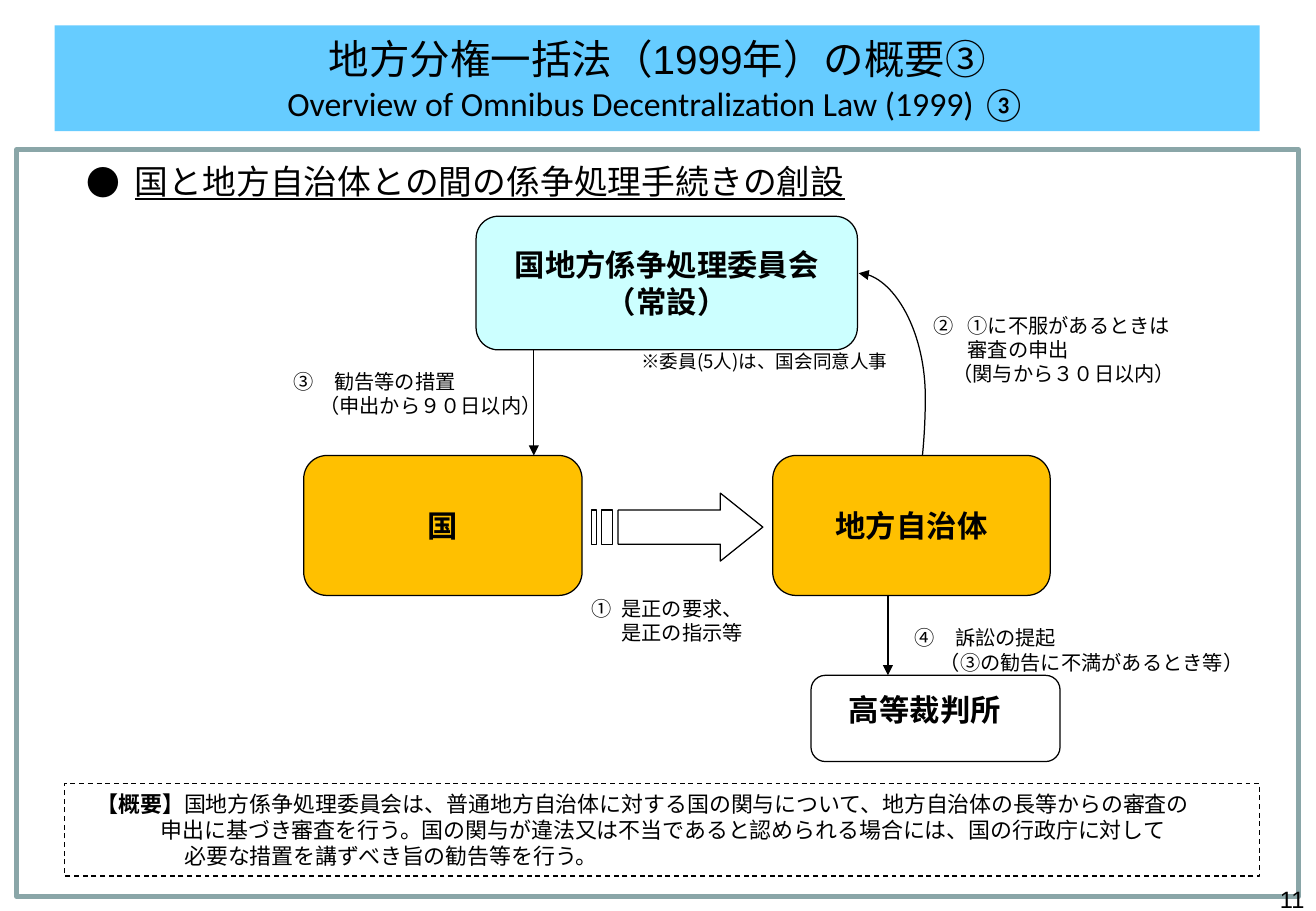
"""Build the slide on dispute settlement between state and local government."""
from dataclasses import dataclass

from lxml.etree import SubElement
from pptx import Presentation
from pptx.dml.color import RGBColor
from pptx.enum.dml import MSO_LINE
from pptx.enum.shapes import MSO_CONNECTOR, MSO_SHAPE
from pptx.enum.text import MSO_ANCHOR, MSO_AUTO_SIZE, PP_ALIGN
from pptx.oxml.ns import qn
from pptx.util import Pt


@dataclass(frozen=True)
class Theme:
    """Colours, fonts and type sizes."""
    ink: str = "000000"
    paper: str = "FFFFFF"
    banner: str = "66CCFF"
    frame: str = "8AA6A8"
    committee: str = "CCFFFF"
    party: str = "FFC000"
    title_font: str = "Calibri"
    heading_font: str = "Arial"
    diagram_font: str = "Times New Roman"
    asian_font: str = "Noto Sans CJK JP"
    title_size: int = 24
    heading_size: int = 20
    box_size: int = 18
    number_size: int = 14
    summary_size: int = 13
    label_size: int = 12
    note_size: int = 11


THEME = Theme()

TITLE = [
    [("地方分権一括法（", {}), ("1999", {"font": THEME.heading_font}), ("年）の概要③", {})],
    [("Overview of Omnibus Decentralization Law (1999) ③", {"size": THEME.heading_size})],
]
HEADING = ["国と地方自治体との間の係争処理手続きの創設"]
SUMMARY = [
    [("【概要】", {"bold": True}),
     ("国地方係争処理委員会は、普通地方自治体に対する国の関与について、地方自治体の長等からの審査の", {})],
    "申出に基づき審査を行う。国の関与が違法又は不当であると認められる場合には、国の行政庁に対して",
    "必要な措置を講ずべき旨の勧告等を行う。",
]
NOTE = ["※委員(5人)は、国会同意人事"]
PAGE_NUMBER = ["11"]

TITLE_AREA = (32.4, 15.1, 714.2, 62.6)
HEADING_AREA = (44, 91.4, 516, 31)
FRAME_AREA = (10, 88.6, 759.6, 442.8)
SUMMARY_AREA = (38.2, 464.4, 708.5, 54.9)
NOTE_AREA = (373, 203.8, 170, 21)
NUMBER_AREA = (598.3, 521.3, 182, 18.7)
COURT_AREA = (480.7, 400.3, 147.6, 51.1)

BOXES = [
    (["国"], (180, 270, 165, 83), MSO_SHAPE.ROUNDED_RECTANGLE, THEME.party),
    (["地方自治体"], (458, 270, 164.5, 83), MSO_SHAPE.ROUNDED_RECTANGLE, THEME.party),
    (["国地方係争処理委員会", "（常設）"], (282.2, 128.2, 226, 79.2),
     MSO_SHAPE.FLOWCHART_ALTERNATE_PROCESS, THEME.committee),
]
LABELS = [
    (["①\t是正の要求、", "是正の指示等"], (345.4, 321.1, 110, 93.6), [(18, -18), (18, 0)]),
    (["②\t①に不服があるときは", "審査の申出", "（関与から３０日以内）"],
     (548.6, 167.8, 181.4, 78.5), [(20, -20), (20, 0), (11, 0)]),
    (["③　勧告等の措置", "（申出から９０日以内）"], (169.2, 213.1, 187.2, 40.3), [(0, 0), (15, 0)]),
    (["④　訴訟の提起", "（③の勧告に不満があるとき等）"], (537.1, 349.2, 215.3, 72), [(0, 0), (15, 0)]),
]
ARROWS = [
    (MSO_CONNECTOR.CURVE, (536.4, 308.9), (509, 162)),
    (MSO_CONNECTOR.STRAIGHT, (316.4, 167.8), (316.4, 270)),
    (MSO_CONNECTOR.STRAIGHT, (526.3, 309.6), (526.3, 400.3)),
]
CURVE_BULGE = -44100

ARROW_TOP, ARROW_BOTTOM, ARROW_TIP = 292.3, 332.6, 452.2
SHAFT_TOP, SHAFT_BOTTOM, SHAFT_LEFT, HEAD_LEFT = 302.4, 322.6, 366.4, 427
STRIPES = [(350.6, 353.5), (356.4, 362.9)]


def place(area):
    """Return an area as lengths."""
    return [Pt(value) for value in area]


def write(shape, lines, *, size, font, bold=False, underline=False, align=PP_ALIGN.LEFT,
          anchor=MSO_ANCHOR.MIDDLE, margins=(7.2, 3.6), indents=()):
    """Fill a shape with lines, each a string or a list of spans."""
    frame = shape.text_frame
    frame.word_wrap = True
    frame.auto_size = MSO_AUTO_SIZE.NONE
    frame.vertical_anchor = anchor
    frame.margin_left = frame.margin_right = Pt(margins[0])
    frame.margin_top = frame.margin_bottom = Pt(margins[1])
    for index, line in enumerate(lines):
        para = frame.add_paragraph() if index else frame.paragraphs[0]
        para.alignment = align
        para.space_before = Pt(0)
        if indents:
            left, first = indents[index]
            properties = para._p.get_or_add_pPr()
            properties.set("marL", str(Pt(left)))
            properties.set("indent", str(Pt(first)))
        for text, change in [(line, {})] if isinstance(line, str) else line:
            span = para.add_run()
            span.text = text
            span.font.name = change.get("font", font)
            span.font.size = Pt(change.get("size", size))
            span.font.bold = change.get("bold", bold)
            span.font.underline = underline
            span.font.color.rgb = RGBColor.from_string(THEME.ink)
            SubElement(span._r.rPr, qn("a:ea"), typeface=THEME.asian_font)


def style(shape, *, fill=None, line=THEME.ink, width=0.75):
    """Set the fill and outline of a shape."""
    shape.shadow.inherit = False
    if fill:
        shape.fill.solid()
        shape.fill.fore_color.rgb = RGBColor.from_string(fill)
    else:
        shape.fill.background()
    if line:
        shape.line.color.rgb = RGBColor.from_string(line)
        shape.line.width = Pt(width)
    else:
        shape.line.fill.background()
    return shape


def add_arrow(page, kind, start, end):
    """Draw a connector with a triangular head."""
    arrow = page.shapes.add_connector(kind, *place(start + end))
    arrow.line.color.rgb = RGBColor.from_string(THEME.ink)
    arrow.line.width = Pt(0.75)
    SubElement(arrow.line._get_or_add_ln(), qn("a:tailEnd"), type="triangle")
    SubElement(arrow._element.spPr, qn("a:effectLst"))
    if kind == MSO_CONNECTOR.CURVE:
        adjustments = arrow._element.spPr.find(qn("a:prstGeom")).get_or_add_avLst()
        SubElement(adjustments, qn("a:gd"), name="adj1", fmla=f"val {CURVE_BULGE}")


def add_striped_arrow(page):
    """Draw the block arrow and the stripes behind it."""
    head = [(HEAD_LEFT, ARROW_TOP), (HEAD_LEFT, SHAFT_TOP), (SHAFT_LEFT, SHAFT_TOP),
            (SHAFT_LEFT, SHAFT_BOTTOM), (HEAD_LEFT, SHAFT_BOTTOM),
            (HEAD_LEFT, ARROW_BOTTOM), (ARROW_TIP, (ARROW_TOP + ARROW_BOTTOM) / 2)]
    stripes = [[(left, SHAFT_TOP), (left, SHAFT_BOTTOM), (right, SHAFT_BOTTOM),
                (right, SHAFT_TOP)] for left, right in STRIPES]
    builder = page.shapes.build_freeform(*place(head[0]))
    builder.add_line_segments([place(point) for point in head[1:]])
    for stripe in stripes:
        builder.move_to(*place(stripe[0]))
        builder.add_line_segments([place(point) for point in stripe[1:]])
    style(builder.convert_to_shape(), fill=THEME.paper)


def main():
    """Assemble and save the deck."""
    deck = Presentation()
    deck.slide_width, deck.slide_height = Pt(780), Pt(540)
    page = deck.slides.add_slide(deck.slide_layouts[1])
    title, heading = page.placeholders
    for box, area in ((title, TITLE_AREA), (heading, HEADING_AREA)):
        box.left, box.top, box.width, box.height = place(area)
    outline = SubElement(title._element.spPr, qn("a:prstGeom"), prst="roundRect")
    SubElement(outline, qn("a:avLst"))
    title.fill.solid()
    title.fill.fore_color.rgb = RGBColor.from_string(THEME.banner)
    write(title, TITLE, size=THEME.title_size, font=THEME.title_font, align=PP_ALIGN.CENTER)
    write(heading, HEADING, size=THEME.heading_size, font=THEME.heading_font, underline=True,
          anchor=MSO_ANCHOR.TOP, indents=[(28.8, -28.8)])
    bullet = heading.text_frame.paragraphs[0]._p.get_or_add_pPr()
    SubElement(bullet, qn("a:buFont"), typeface=THEME.asian_font)
    SubElement(bullet, qn("a:buChar"), char="●")

    frame = page.shapes.add_shape(MSO_SHAPE.RECTANGLE, *place(FRAME_AREA))
    style(frame, line=THEME.frame, width=3)
    for arrow in ARROWS:
        add_arrow(page, *arrow)
    for lines, area, kind, fill in BOXES:
        box = style(page.shapes.add_shape(kind, *place(area)), fill=fill)
        write(box, lines, size=THEME.box_size, font=THEME.diagram_font, bold=True,
              align=PP_ALIGN.CENTER, margins=(5, 3))
    add_striped_arrow(page)
    court = page.shapes.add_shape(MSO_SHAPE.ROUNDED_RECTANGLE, *place(COURT_AREA))
    write(style(court, fill=THEME.paper), ["高等裁判所"], size=THEME.box_size,
          font=THEME.asian_font, bold=True, anchor=MSO_ANCHOR.TOP, margins=(20, 7))
    for lines, area, indents in LABELS:
        write(page.shapes.add_textbox(*place(area)), lines, size=THEME.label_size,
              font=THEME.diagram_font, margins=(5, 3), indents=indents)
    summary = style(page.shapes.add_shape(MSO_SHAPE.RECTANGLE, *place(SUMMARY_AREA)))
    summary.line.dash_style = MSO_LINE.DASH
    write(summary, SUMMARY, size=THEME.summary_size, font=THEME.asian_font,
          indents=[(0, 12), (50, 0), (64, 0)])
    write(page.shapes.add_textbox(*place(NOTE_AREA)), NOTE, size=THEME.note_size,
          font=THEME.asian_font, anchor=MSO_ANCHOR.TOP)
    write(page.shapes.add_textbox(*place(NUMBER_AREA)), PAGE_NUMBER, size=THEME.number_size,
          font=THEME.heading_font, align=PP_ALIGN.RIGHT, anchor=MSO_ANCHOR.TOP)
    deck.save("out.pptx")


if __name__ == "__main__":
    main()
